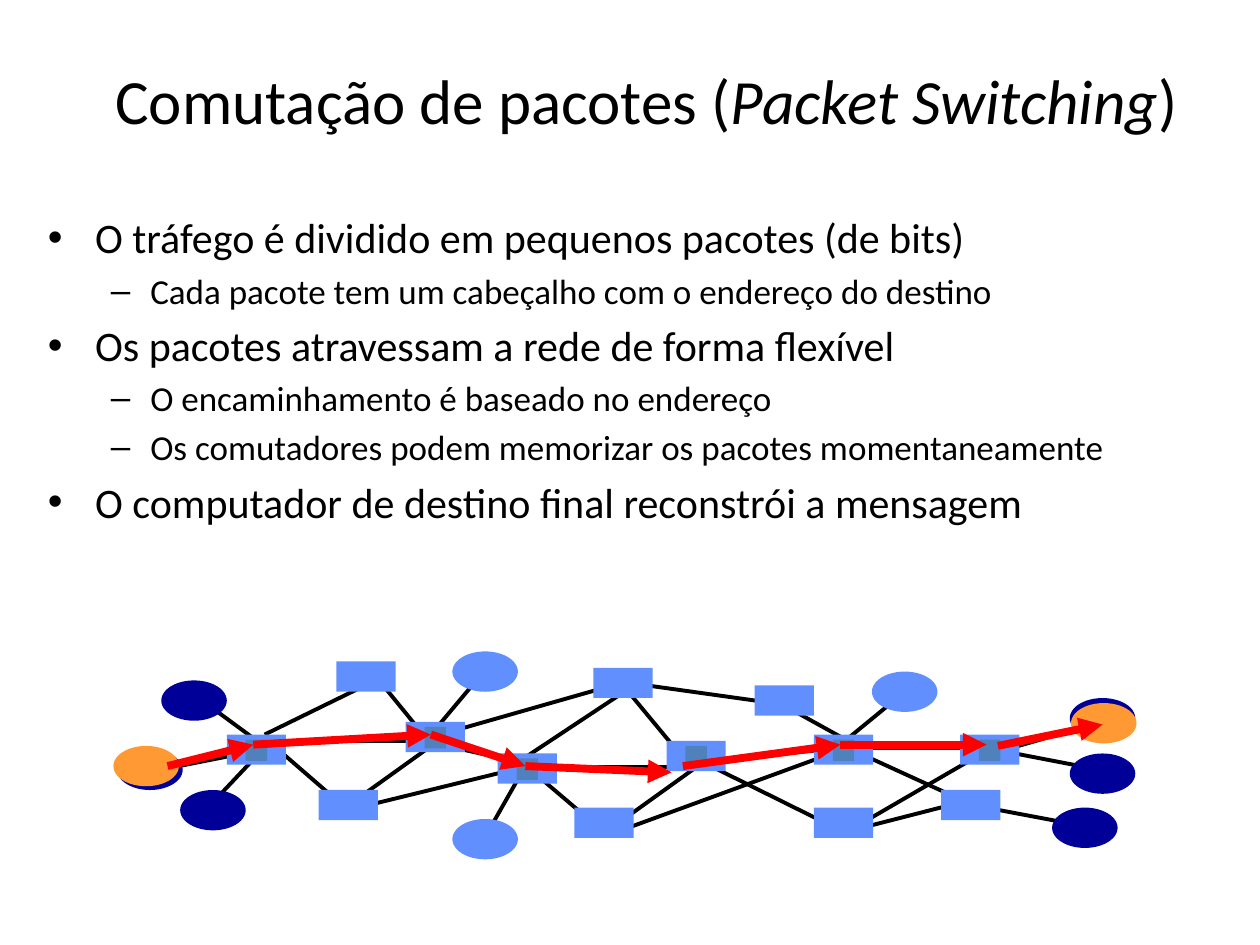
"""Builds a slide that explains packet switching with a network diagram."""
from dataclasses import dataclass

from lxml.etree import SubElement
from pptx import Presentation
from pptx.dml.color import RGBColor
from pptx.enum.shapes import MSO_CONNECTOR as Connector, MSO_SHAPE as Preset
from pptx.enum.text import MSO_ANCHOR as Anchor, PP_ALIGN as Align
from pptx.oxml.ns import qn
from pptx.util import Inches, Pt


@dataclass(frozen=True)
class Theme:
    font: str = "Calibri"
    text: str = "000000"
    link: str = "000000"
    node: str = "618FFD"
    core: str = "4F81BD"
    host: str = "000099"
    endpoint: str = "FF9933"
    route: str = "FF0000"
    title_size: float = 36
    level_sizes: tuple = (24, 20)
    link_width: float = 2.25
    route_width: float = 4.5


theme = Theme()
presentation = Presentation()
presentation.slide_width, presentation.slide_height = Inches(10), Inches(7.5)
slide = presentation.slides.add_slide(presentation.slide_layouts[1])


def add_line(points, color, width, arrow=False):
    line = slide.shapes.add_connector(Connector.STRAIGHT, *map(Inches, points))
    line.line.color.rgb = RGBColor.from_string(color)
    line.line.width = Pt(width)
    if arrow:
        SubElement(line.line._get_or_add_ln(), qn("a:tailEnd"), type="triangle")
    SubElement(line._element.spPr, qn("a:effectLst"))


def add_nodes(preset, positions, size, color):
    for position in positions:
        shape = slide.shapes.add_shape(preset, *map(Inches, (*position, *size)))
        shape.shadow.inherit = False
        shape.fill.solid()
        shape.fill.fore_color.rgb = RGBColor.from_string(color)
        shape.line.fill.background()


title, body = slide.placeholders
title.left, title.top, title.width, title.height = map(Inches, (0.67, 0.25, 8.92, 1.08))
title.text_frame.vertical_anchor = Anchor.MIDDLE
paragraph = title.text_frame.paragraphs[0]
paragraph.alignment = Align.CENTER
paragraph.font.name = theme.font
paragraph.font.size = Pt(theme.title_size)
paragraph.font.color.rgb = RGBColor.from_string(theme.text)
for text, italic in [("Comutação de pacotes (", False), ("Packet Switching", True), (")", False)]:
    run = paragraph.add_run()
    run.text = text
    run.font.italic = italic

body.left, body.top, body.width, body.height = map(Inches, (0.28, 1.63, 9.5, 3.25))
bullets = [
    (0, "O tráfego é dividido em pequenos pacotes (de bits)"),
    (1, "Cada pacote tem um cabeçalho com o endereço do destino"),
    (0, "Os pacotes atravessam a rede de forma flexível"),
    (1, "O encaminhamento é baseado no endereço"),
    (1, "Os comutadores podem memorizar os pacotes momentaneamente"),
    (0, "O computador de destino final reconstrói a mensagem"),
]
body.text_frame.text = "\n".join(text for level, text in bullets)
for paragraph, (level, text) in zip(body.text_frame.paragraphs, bullets):
    paragraph.level = level
    paragraph.font.name = theme.font
    paragraph.font.size = Pt(theme.level_sizes[level])
    paragraph.font.color.rgb = RGBColor.from_string(theme.text)

links = [
    (3.84, 5.33, 3.42, 5.83), (4.17, 6.08, 3.84, 6.66), (7.17, 5.5, 6.67, 5.91),
    (7.72, 6.39, 8.57, 6.55), (7.98, 5.95, 8.67, 5.75), (7.9, 5.95, 8.78, 6.12),
    (4.2, 6.1, 4.8, 6.61), (5.43, 6.09, 4.27, 6.09), (5.51, 6.1, 4.8, 6.61),
    (4.82, 6.63, 6.71, 5.94), (6.76, 5.94, 7.88, 5.94), (6.76, 5.95, 7.7, 6.38),
    (6.76, 6.58, 7.88, 5.93), (6.84, 6.57, 7.62, 6.37), (5, 5.4, 3.39, 5.86),
    (1.7, 5.63, 2.04, 5.88), (2.14, 5.89, 1.65, 6.41), (6.17, 5.57, 6.82, 5.93),
    (4.85, 5.4, 6.28, 5.6), (2.14, 5.89, 2.74, 6.41), (3.37, 5.88, 2.21, 5.88),
    (3.45, 5.9, 2.74, 6.41), (3.45, 5.9, 4.13, 6.05), (2.76, 6.43, 4.31, 6.05),
    (2.1, 5.83, 3, 5.39), (4.14, 6.03, 4.94, 5.5), (2.13, 5.94, 1.22, 6.12),
    (4.97, 5.47, 5.45, 6.05), (5.44, 5.98, 6.71, 6.61), (3, 5.39, 3.4, 5.88),
    (5.62, 6.04, 6.74, 5.93),
]
for link in links:
    add_line(link, theme.link, theme.link_width)

node_size, host_size, core_size = (0.47, 0.24), (0.52, 0.32), (0.17, 0.17)
routers = [(1.8, 5.83), (3.22, 5.73), (3.95, 5.98), (5.29, 5.88), (6.46, 5.83), (7.62, 5.83)]
switches = [(2.53, 6.27), (2.67, 5.25), (4.56, 6.41), (4.71, 5.3),
            (5.99, 5.44), (6.46, 6.41), (7.47, 6.27)]
cores = [(left + 0.15, top + 0.04) for left, top in routers]
hosts = [(1.28, 5.4), (0.93, 5.95), (1.43, 6.27), (8.49, 5.54), (8.49, 5.98), (8.35, 6.41)]
add_nodes(Preset.RECTANGLE, routers + switches, node_size, theme.node)
add_nodes(Preset.OVAL, hosts, host_size, theme.host)
add_nodes(Preset.RECTANGLE, cores, core_size, theme.core)
add_nodes(Preset.OVAL, [(3.59, 5.17), (3.59, 6.5), (6.92, 5.33)], host_size, theme.node)
add_nodes(Preset.OVAL, [(8.5, 5.58), (0.9, 5.92)], host_size, theme.endpoint)

route = [
    (1.33, 6.08, 2.01, 5.91), (2.01, 5.91, 3.42, 5.83), (3.42, 5.83, 4.17, 6.08),
    (4.17, 6.08, 5.33, 6.13), (5.42, 6.08, 6.67, 5.91), (6.67, 5.91, 7.83, 5.91),
    (7.92, 5.92, 8.75, 5.75),
]
for hop in route:
    add_line(hop, theme.route, theme.route_width, arrow=True)

presentation.save("out.pptx")
